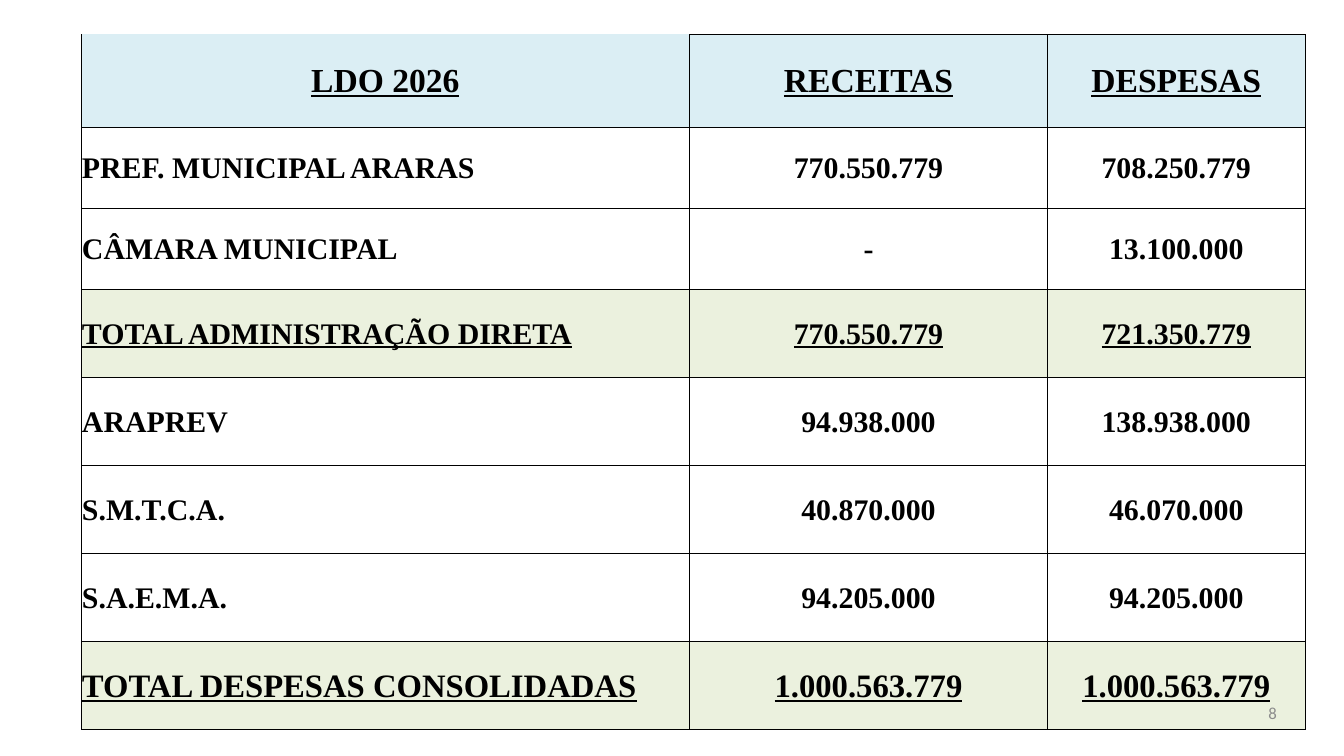
import dataclasses

import lxml.etree
import pptx
import pptx.dml.color
import pptx.enum.text
import pptx.oxml.ns
import pptx.util

ALIGN = pptx.enum.text.PP_ALIGN


@dataclasses.dataclass(frozen=True)
class Theme:
    """Colours, fonts and type sizes of the slide."""
    ink: str = "000000"
    muted: str = "8C8C8C"
    header: str = "DBEEF4"
    total: str = "EBF1DE"
    paper: str = "FFFFFF"
    table_font: str = "Times New Roman"
    number_font: str = "Calibri"
    header_size: int = 36
    body_size: int = 32
    grand_size: int = 35
    number_size: int = 18
    border: float = 0.5
    plain_table: str = "{2D5ABB26-0587-4C30-8999-92F81FD0307C}"


THEME = Theme()
SLIDE_SIZE = (20, 11.25)
TABLE_BOX = (0.42, 0.13, 19, 10.73)
NUMBER_BOX = (14.4, 10.46, 4.6, 0.56)
COLUMNS = (0.79, 9.05, 5.33, 3.83)
ROW_HEIGHTS = (0.38, 1.38, 1.21, 1.21) + (1.31,) * 5
ROW_STYLES = {
    "header": (THEME.header, THEME.header_size, True),
    "body": (THEME.paper, THEME.body_size, False),
    "total": (THEME.total, THEME.body_size, True),
    "grand": (THEME.total, THEME.grand_size, True),
}
BUDGET = (
    ("header", "LDO 2026", "RECEITAS", "DESPESAS"),
    ("body", "PREF. MUNICIPAL ARARAS", "770.550.779", "708.250.779"),
    ("body", "CÂMARA MUNICIPAL", "-", "13.100.000"),
    ("total", "TOTAL ADMINISTRAÇÃO DIRETA", "770.550.779", "721.350.779"),
    ("body", "ARAPREV", "94.938.000", "138.938.000"),
    ("body", "S.M.T.C.A.", "40.870.000", "46.070.000"),
    ("body", "S.A.E.M.A.", "94.205.000", "94.205.000"),
    ("grand", "TOTAL DESPESAS CONSOLIDADAS", "1.000.563.779", "1.000.563.779"),
)


def apply(target, values):
    """Set each attribute named in a dict of format values."""
    for name, value in values.items():
        setattr(target, name, value)


def inches(lengths):
    """Turn a sequence of inches into slide lengths."""
    return [pptx.util.Inches(length) for length in lengths]


def write(frame, text, alignment, color, **font):
    """Write one formatted paragraph into a text frame."""
    paragraph = frame.paragraphs[0]
    paragraph.alignment = alignment
    run = paragraph.add_run()
    run.text = text
    apply(run.font, font)
    run.font.color.rgb = pptx.dml.color.RGBColor.from_string(color)


def add_borders(cell, sides):
    """Draw thin solid lines on the given sides of a cell."""
    properties = cell._tc.get_or_add_tcPr()
    tag = pptx.oxml.ns.qn
    for side in "LRTB":
        line = lxml.etree.SubElement(properties, tag("a:ln" + side))
        if side not in sides:
            lxml.etree.SubElement(line, tag("a:noFill"))
            continue
        line.set("w", str(pptx.util.Pt(THEME.border)))
        fill = lxml.etree.SubElement(line, tag("a:solidFill"))
        lxml.etree.SubElement(fill, tag("a:srgbClr")).set("val", THEME.ink)


def format_cell(cell, sides, fill=None):
    """Give a cell its margins, borders and fill."""
    margin = pptx.util.Inches(0.01)
    apply(cell, {
        "margin_left": margin, "margin_right": margin,
        "margin_top": margin, "margin_bottom": 0,
        "vertical_anchor": pptx.enum.text.MSO_ANCHOR.MIDDLE,
    })
    add_borders(cell, sides)
    if fill:
        cell.fill.solid()
        cell.fill.fore_color.rgb = pptx.dml.color.RGBColor.from_string(fill)
    else:
        cell.fill.background()


def add_budget_table(slide, box):
    """Place the budget table, scaling its grid to the box."""
    shape = slide.shapes.add_table(len(ROW_HEIGHTS), len(COLUMNS), *inches(box))
    table = shape.table
    apply(table, {"first_row": False, "horz_banding": False})
    style = table._tbl.tblPr.find(pptx.oxml.ns.qn("a:tableStyleId"))
    style.text = THEME.plain_table
    for column, width in zip(table.columns, COLUMNS):
        column.width = pptx.util.Inches(box[2] * width / sum(COLUMNS))
    for row, height in zip(table.rows, ROW_HEIGHTS):
        row.height = pptx.util.Inches(box[3] * height / sum(ROW_HEIGHTS))
    for column in range(len(COLUMNS)):
        format_cell(table.cell(0, column), "B" if column > 1 else "")
    table.cell(0, 0).merge(table.cell(0, len(COLUMNS) - 1))
    for row, (kind, *texts) in enumerate(BUDGET, start=1):
        fill, size, underline = ROW_STYLES[kind]
        format_cell(table.cell(row, 0), "R")
        for column, text in enumerate(texts, start=1):
            cell = table.cell(row, column)
            is_label = column == 1 and kind != "header"
            is_corner = column == 1 and kind == "header"
            format_cell(cell, "LRB" if is_corner else "LRTB", fill)
            write(cell.text_frame, text, ALIGN.JUSTIFY if is_label else ALIGN.CENTER,
                  THEME.ink, name=THEME.table_font, size=pptx.util.Pt(size),
                  bold=True, underline=underline)


def add_page_number(slide, box, number):
    """Place the page number at the right of its box."""
    frame = slide.shapes.add_textbox(*inches(box)).text_frame
    apply(frame, {"word_wrap": True, "margin_left": 0, "margin_right": 0,
                  "margin_top": 0, "margin_bottom": 0})
    write(frame, number, ALIGN.RIGHT, THEME.muted, name=THEME.number_font,
          size=pptx.util.Pt(THEME.number_size))


def main():
    """Build and save the presentation."""
    presentation = pptx.Presentation()
    width, height = inches(SLIDE_SIZE)
    apply(presentation, {"slide_width": width, "slide_height": height})
    slide = presentation.slides.add_slide(presentation.slide_layouts[6])
    add_budget_table(slide, TABLE_BOX)
    add_page_number(slide, NUMBER_BOX, "8")
    presentation.save("out.pptx")


if __name__ == "__main__":
    main()
